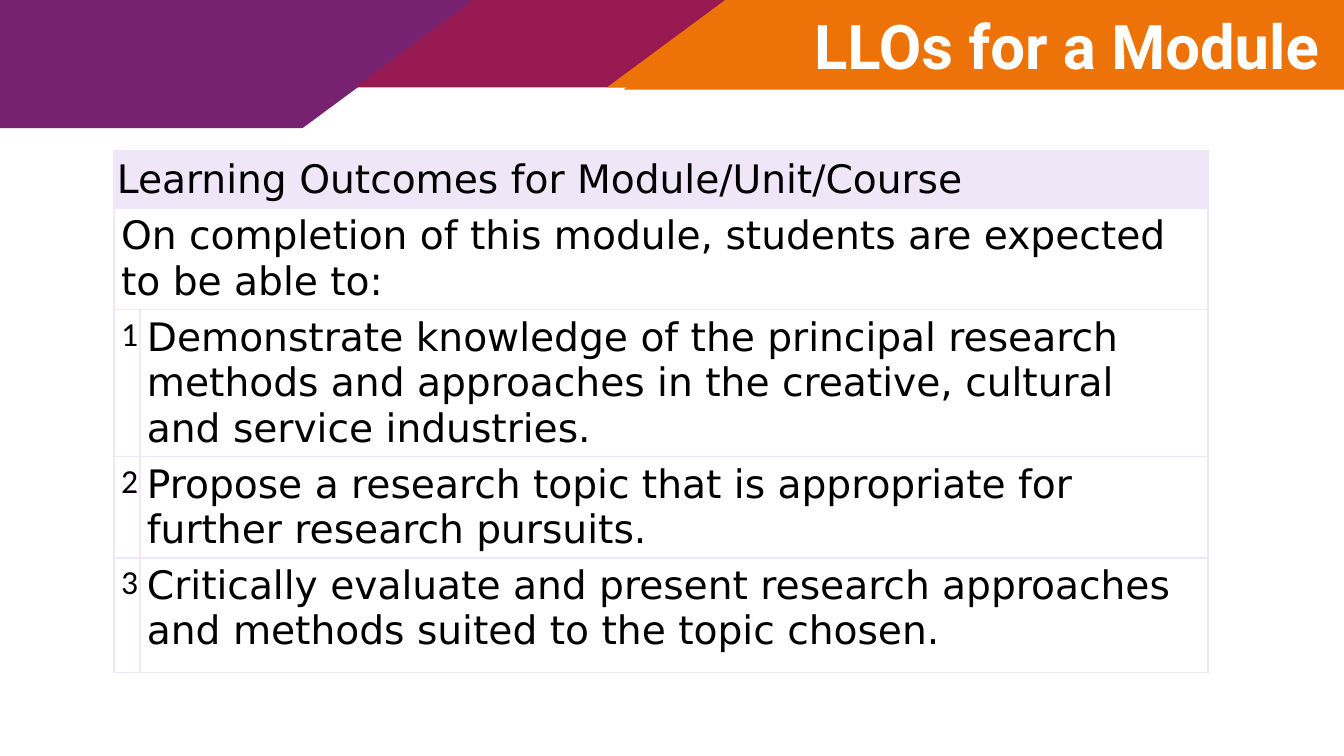
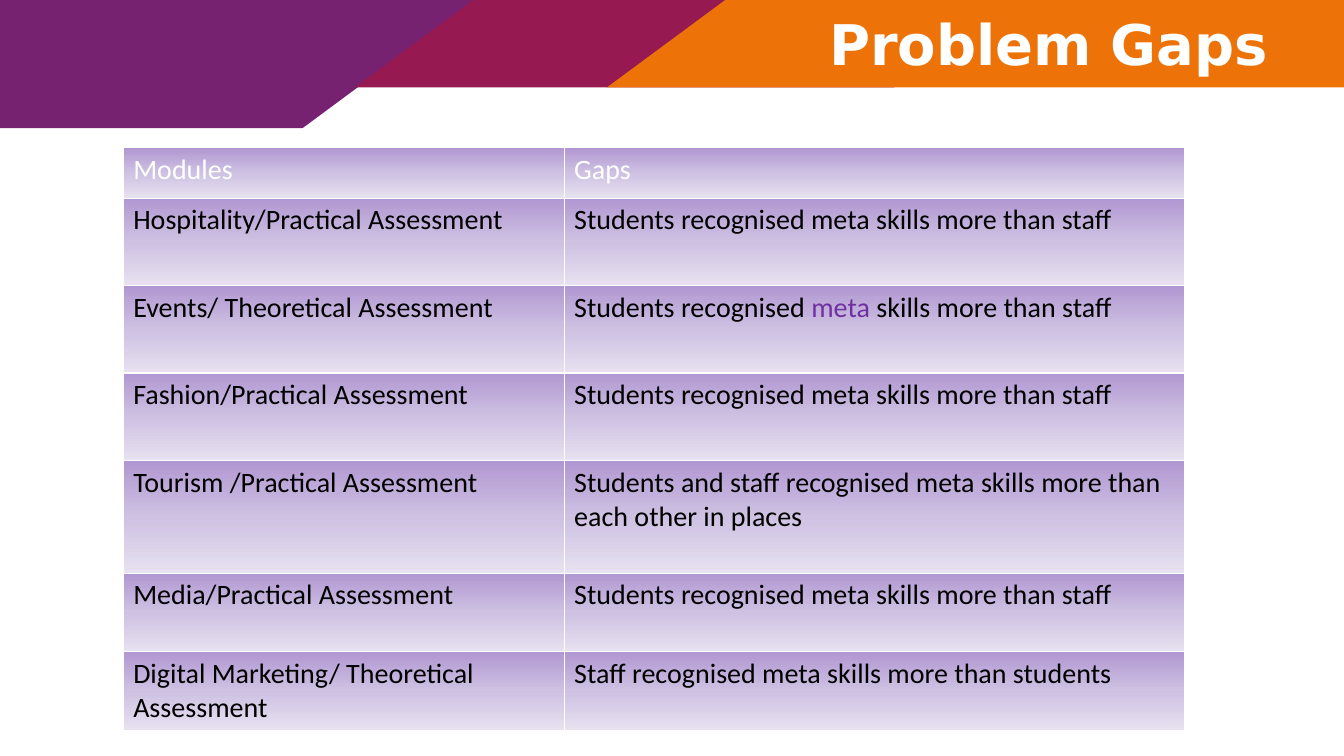
"""Build two slides on module learning outcomes and gaps in recognised skills."""
from copy import deepcopy

from lxml.etree import SubElement
from pptx import Presentation
from pptx.dml.color import RGBColor
from pptx.enum.shapes import MSO_SHAPE
from pptx.enum.text import MSO_ANCHOR, MSO_AUTO_SIZE, PP_ALIGN
from pptx.oxml.ns import qn
from pptx.util import Pt

COLOURS = {
    "purple": "762271", "crimson": "971951", "orange": "ED7309",
    "white": "FFFFFF", "black": "000000", "accent": "7030A0", "lilac": "EFE7F7",
}
GRADIENT = ["B197D2", "CEC1E2", "E7E1F0"]
BANDS = [
    (-226, -1.5, 568, 93, "purple"),
    (253.5, -1.5, 471.5, 64, "crimson"),
    (433.5, -1.5, 644.5, 64, "orange"),
]
TITLE_WIDTH, TITLE_HEIGHT = 396, 64
OUTCOMES = [
    "Demonstrate knowledge of the principal research methods and approaches "
    "in the creative, cultural and service industries.",
    "Propose a research topic that is appropriate for further research pursuits.",
    "Critically evaluate and present research approaches and methods suited to the topic chosen.",
]
STUDENTS_AHEAD = "Students recognised meta skills more than staff"
GAPS = [
    ("Modules", "Gaps"),
    ("Hospitality/Practical Assessment", STUDENTS_AHEAD),
    ("Events/ Theoretical Assessment", STUDENTS_AHEAD.replace("meta", "|meta|")),
    ("Fashion/Practical Assessment", STUDENTS_AHEAD),
    ("Tourism /Practical Assessment",
     "Students and staff recognised meta skills more than each other in places"),
    ("Media/Practical Assessment", STUDENTS_AHEAD),
    ("Digital Marketing/ Theoretical Assessment", "Staff recognised meta skills more than students"),
]


def rgb(name):
    return RGBColor.from_string(COLOURS[name])


class Deck:
    def __init__(self):
        self.presentation = Presentation()
        self.presentation.slide_width = Pt(960)
        self.presentation.slide_height = Pt(540)
        self.slide = None

    def add_slide(self):
        self.slide = self.presentation.slides.add_slide(self.presentation.slide_layouts[5])
        for band in BANDS:
            self.band(*band)

    def band(self, left, top, width, height, colour):
        shape = self.slide.shapes.add_shape(
            MSO_SHAPE.PARALLELOGRAM, Pt(left), Pt(top), Pt(width), Pt(height))
        shape.adjustments[0] = 1.353
        shape.shadow.inherit = False
        shape.fill.solid()
        shape.fill.fore_color.rgb = rgb(colour)
        shape.line.fill.background()

    def title(self, text, left, top, font, size):
        title = self.slide.shapes.title
        title.left, title.top = Pt(left), Pt(top)
        title.width, title.height = Pt(TITLE_WIDTH), Pt(TITLE_HEIGHT)
        frame = title.text_frame
        frame.margin_left = frame.margin_right = frame.margin_top = frame.margin_bottom = 0
        frame.auto_size = MSO_AUTO_SIZE.NONE
        frame.vertical_anchor = MSO_ANCHOR.MIDDLE
        self.text(frame, text, font, size, "white", bold=True)
        frame.paragraphs[0].alignment = PP_ALIGN.CENTER
        self.slide.shapes._spTree.append(title._element)

    def text(self, frame, text, font, size, colour="black", bold=False):
        for index, part in enumerate(text.split("|")):
            run = frame.paragraphs[0].add_run()
            run.text = part
            run.font.name, run.font.size, run.font.bold = font, Pt(size), bold
            run.font.color.rgb = rgb("accent" if index % 2 else colour)

    def table(self, left, top, columns, rows, border, border_width):
        table = self.slide.shapes.add_table(
            len(rows), len(columns), Pt(left), Pt(top), Pt(sum(columns)), Pt(sum(rows))).table
        table.first_row = table.horz_banding = False
        for column, width in zip(table.columns, columns):
            column.width = Pt(width)
        for row, height in zip(table.rows, rows):
            row.height = Pt(height)
        for cell in table.iter_cells():
            self.borders(cell, border, border_width)
        return table

    def borders(self, cell, colour, width):
        properties = cell._tc.get_or_add_tcPr()
        for side in ("a:lnL", "a:lnR", "a:lnT", "a:lnB"):
            line = SubElement(properties, qn(side), w=str(int(Pt(width))))
            fill = SubElement(line, qn("a:solidFill"))
            SubElement(fill, qn("a:srgbClr"), val=COLOURS[colour])

    def solid(self, cell, colour):
        cell.fill.solid()
        cell.fill.fore_color.rgb = rgb(colour)

    def gradient(self, cell):
        cell.fill.gradient()
        cell.fill.gradient_angle = 270
        stops = cell._tc.tcPr.find(qn("a:gradFill")).find(qn("a:gsLst"))
        stops.insert(1, deepcopy(stops[0]))
        for index, (stop, colour) in enumerate(zip(cell.fill.gradient_stops, GRADIENT)):
            stop.position = index / 2
            stop.color.rgb = RGBColor.from_string(colour)

    def margins(self, cell, left, top, right, bottom):
        cell.margin_left, cell.margin_top = Pt(left), Pt(top)
        cell.margin_right, cell.margin_bottom = Pt(right), Pt(bottom)


def outcomes_slide(deck):
    deck.add_slide()
    deck.band(445.5, 0, 644.5, 64, "orange")
    deck.title("LLOs for a Module", 564, 0, "Roboto", 44)
    table = deck.table(81.5, 108, [18.5, 763], [41, 72, 105, 72, 82], "lilac", 1.2)
    for cell in table.iter_cells():
        deck.solid(cell, "white")
        deck.margins(cell, 5, 3.6, 7.2, 3.6)
    for row in range(2):
        table.cell(row, 0).merge(table.cell(row, 1))
    header, introduction = table.cell(0, 0), table.cell(1, 0)
    deck.solid(header, "lilac")
    deck.margins(header, 2, 2, 2, 2)
    header.vertical_anchor = MSO_ANCHOR.MIDDLE
    deck.text(header.text_frame, "Learning Outcomes for Module/Unit/Course", "DejaVu Sans", 28)
    deck.text(introduction.text_frame,
              "On completion of this module, students are expected to be able to:",
              "DejaVu Sans", 28)
    for number, outcome in enumerate(OUTCOMES, 1):
        number_frame = table.cell(number + 1, 0).text_frame
        deck.text(number_frame, str(number), "Calibri", 24)
        number_frame.paragraphs[0].alignment = PP_ALIGN.CENTER
        deck.text(table.cell(number + 1, 1).text_frame, outcome, "DejaVu Sans", 28)


def gaps_slide(deck):
    deck.add_slide()
    deck.title("Problem Gaps", 551, -1.5, "DejaVu Sans", 40)
    table = deck.table(88, 105.5, [315, 443.5], [36, 62.5, 62.5, 62.5, 80.5, 56, 56], "white", 1)
    for row, texts in enumerate(GAPS):
        for column, text in enumerate(texts):
            cell = table.cell(row, column)
            deck.gradient(cell)
            deck.text(cell.text_frame, text, "Calibri", 20, "black" if row else "white")


def main():
    deck = Deck()
    outcomes_slide(deck)
    gaps_slide(deck)
    deck.presentation.save("out.pptx")


if __name__ == "__main__":
    main()
